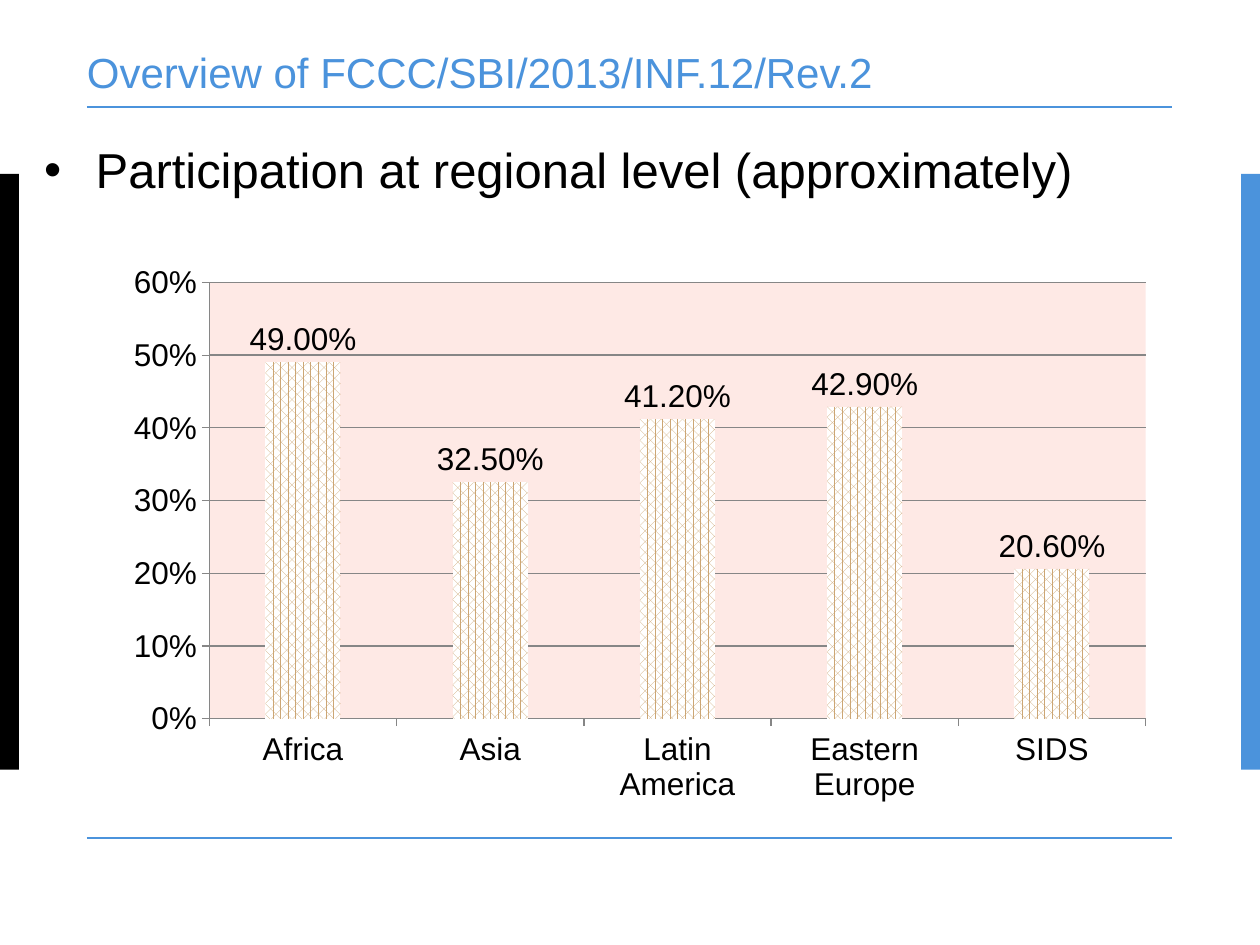
from lxml.etree import SubElement
from pptx import Presentation
from pptx.chart.data import CategoryChartData
from pptx.dml.color import RGBColor
from pptx.enum.chart import XL_CHART_TYPE, XL_LABEL_POSITION, XL_TICK_MARK
from pptx.enum.dml import MSO_PATTERN
from pptx.enum.shapes import MSO_CONNECTOR, MSO_SHAPE
from pptx.enum.text import MSO_ANCHOR
from pptx.oxml import parse_xml
from pptx.oxml.ns import nsdecls, qn
from pptx.util import Inches, Pt

BLACK = RGBColor(0x00, 0x00, 0x00)
WHITE = RGBColor(0xFF, 0xFF, 0xFF)
BLUE = RGBColor(0x4B, 0x93, 0xDC)
TAN = RGBColor(0xCC, 0xA6, 0x74)
PINK = RGBColor(0xFE, 0xE9, 0xE5)
GRAY = RGBColor(0x86, 0x86, 0x86)
FONT = "Arial"

PARTICIPATION = {
    "Africa": 0.49,
    "Asia": 0.325,
    "Latin America": 0.412,
    "Eastern Europe": 0.429,
    "SIDS": 0.206,
}


class SlideBuilder:
    def __init__(self, slide):
        self.slide = slide

    def bar(self, x, y, w, h, color):
        sp = self.slide.shapes.add_shape(
            MSO_SHAPE.RECTANGLE, Inches(x), Inches(y), Inches(w), Inches(h))
        sp.shadow.inherit = False
        sp.fill.solid()
        sp.fill.fore_color.rgb = color
        sp.line.fill.background()

    def rule(self, x1, x2, y):
        line = self.slide.shapes.add_connector(
            MSO_CONNECTOR.STRAIGHT, Inches(x1), Inches(y), Inches(x2), Inches(y))
        line.line.color.rgb = BLUE
        line.line.width = Pt(1)
        SubElement(line._element.spPr, qn("a:effectLst"))

    def text(self, x, y, w, h, text, size, color, anchor=MSO_ANCHOR.TOP):
        """Add a one-paragraph text box without insets; return the paragraph."""
        tf = self.slide.shapes.add_textbox(
            Inches(x), Inches(y), Inches(w), Inches(h)).text_frame
        tf.word_wrap = True
        tf.vertical_anchor = anchor
        tf.margin_left = tf.margin_right = tf.margin_top = tf.margin_bottom = 0
        p = tf.paragraphs[0]
        p.text = text
        font = p.runs[0].font
        font.name, font.size, font.color.rgb = FONT, Pt(size), color
        return p

    def bullet(self, p, indent):
        pPr = p._p.get_or_add_pPr()
        pPr.set("marL", str(Inches(indent)))
        pPr.set("indent", str(-Inches(indent)))
        SubElement(pPr, qn("a:buFont"), typeface=FONT)
        SubElement(pPr, qn("a:buChar"), char="•")

    def column_chart(self, x, y, w, h, values):
        data = CategoryChartData(number_format="0.00%")
        data.categories = list(values)
        data.add_series("Series 1", list(values.values()))
        chart = self.slide.shapes.add_chart(
            XL_CHART_TYPE.COLUMN_CLUSTERED,
            Inches(x), Inches(y), Inches(w), Inches(h), data).chart
        chart.has_legend = chart.has_title = False
        chart.font.name, chart.font.size = FONT, Pt(18)
        chart.font.color.rgb = BLACK

        for axis in (chart.category_axis, chart.value_axis):
            axis.major_tick_mark = XL_TICK_MARK.OUTSIDE
            axis.format.line.color.rgb = GRAY
        axis = chart.value_axis
        axis.minimum_scale, axis.maximum_scale, axis.major_unit = 0, 0.6, 0.1
        axis.tick_labels.number_format = "0%"
        axis.tick_labels.number_format_is_linked = False
        axis.major_gridlines.format.line.color.rgb = GRAY

        plot = chart.plots[0]
        plot.gap_width = 150
        plot.vary_by_categories = False
        fill = plot.series[0].format.fill
        fill.patterned()
        fill.pattern = MSO_PATTERN.PERCENT_60
        fill.fore_color.rgb, fill.back_color.rgb = TAN, WHITE
        plot.has_data_labels = True
        labels = plot.data_labels
        labels.show_value = True
        labels.number_format = "0.00%"
        labels.number_format_is_linked = False
        labels.position = XL_LABEL_POSITION.OUTSIDE_END
        self.plot_area(chart, 0.09, 0.05, 0.89, 0.78)

    def plot_area(self, chart, x, y, w, h):
        """Fill the plot area and place it by fractions of the chart."""
        area = chart._chartSpace.chart.plotArea
        for old in area.findall(qn("c:layout")):
            area.remove(old)
        sizes = "".join(f'<c:{tag} val="{val}"/>'
                        for tag, val in zip("xywh", (x, y, w, h)))
        area.insert(0, parse_xml(
            f'<c:layout {nsdecls("c")}><c:manualLayout>'
            '<c:layoutTarget val="inner"/><c:xMode val="edge"/><c:yMode val="edge"/>'
            f'{sizes}</c:manualLayout></c:layout>'))
        area.append(parse_xml(
            f'<c:spPr {nsdecls("c", "a")}><a:solidFill><a:srgbClr val="{PINK}"/>'
            '</a:solidFill><a:ln><a:noFill/></a:ln></c:spPr>'))


def main():
    prs = Presentation()
    prs.slide_width, prs.slide_height = Inches(10), Inches(7.5)
    s = SlideBuilder(prs.slides.add_slide(prs.slide_layouts[6]))

    for x, color in ((0, BLACK), (9.85, BLUE)):
        s.bar(x, 1.38, 0.15, 4.73, color)
    for y in (0.85, 6.65):
        s.rule(0.69, 9.3, y)

    title = s.text(0.69, 0.34, 8.61, 0.65, "Overview of FCCC/SBI/2013/INF.12/Rev.2",
                   24, BLUE, MSO_ANCHOR.MIDDLE)
    title.line_spacing = Pt(15)
    body = s.text(0.35, 1.11, 9.37, 5.55,
                  "Participation at regional level (approximately)", 28, BLACK)
    s.bullet(body, 0.41)
    s.column_chart(0.91, 2.02, 8.35, 4.44, PARTICIPATION)

    prs.save("out.pptx")


if __name__ == "__main__":
    main()
